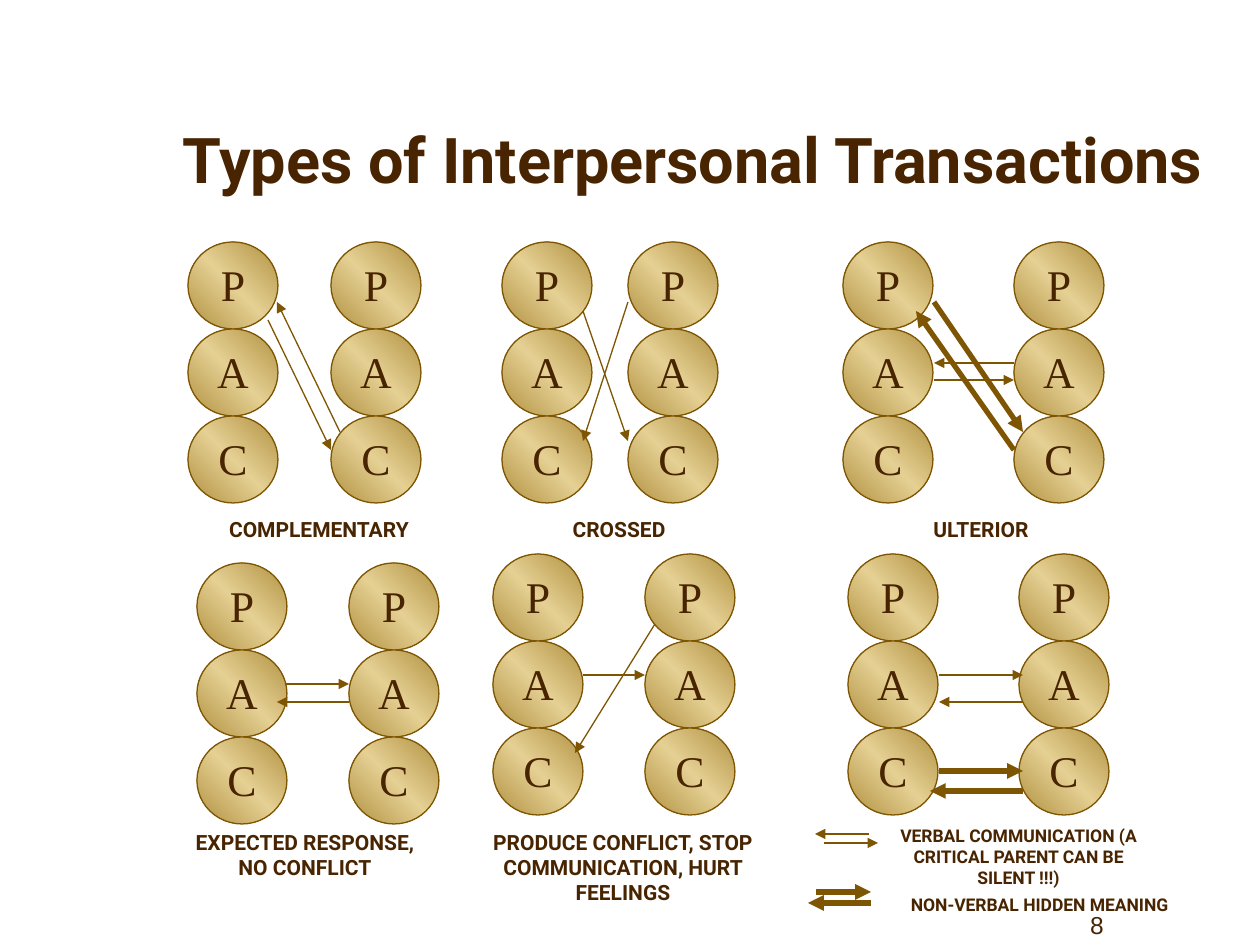
from copy import deepcopy
from dataclasses import dataclass

from lxml import etree
from pptx import Presentation
from pptx.dml.color import RGBColor
from pptx.enum.shapes import MSO_CONNECTOR, MSO_SHAPE
from pptx.enum.text import MSO_ANCHOR, PP_ALIGN
from pptx.oxml.ns import qn
from pptx.slide import Slide
from pptx.text.text import TextFrame
from pptx.util import Pt

CENTER = PP_ALIGN.CENTER
TOP, MIDDLE, BOTTOM = MSO_ANCHOR.TOP, MSO_ANCHOR.MIDDLE, MSO_ANCHOR.BOTTOM
OVAL, STRAIGHT = MSO_SHAPE.OVAL, MSO_CONNECTOR.STRAIGHT

EMU_PER_PX = 914400 / 126
PAGE_WIDTH, PAGE_HEIGHT = 1260, 945
CIRCLE_WIDTH, CIRCLE_HEIGHT = 90, 87
EGO_STATES = "PAC"


@dataclass(frozen=True)
class Theme:
    ink: RGBColor = RGBColor(0x48, 0x24, 0x00)
    outline: RGBColor = RGBColor(0x7E, 0x55, 0x02)
    gold_dark: RGBColor = RGBColor(0xB0, 0x90, 0x40)
    gold_light: RGBColor = RGBColor(0xE5, 0xD0, 0x93)
    sans: str = "Roboto"
    serif: str = "Times New Roman"
    number_font: str = "Arial"
    title_size: int = 36
    state_size: int = 25
    number_size: int = 14
    caption_size: int = 12
    legend_size: int = 10
    thin: float = 0.75
    thick: float = 3


THEME = Theme()


@dataclass(frozen=True)
class Pair:
    """Two people, each a column of Parent, Adult and Child circles."""
    left_person: int
    right_person: int
    top: int


@dataclass(frozen=True)
class Arrow:
    start: tuple[int, int]
    end: tuple[int, int]
    weight: float = THEME.thin


@dataclass(frozen=True)
class Label:
    text: str
    left: int
    top: int
    width: int
    height: int
    size: int = THEME.caption_size
    font: str = THEME.sans
    bold: bool = True
    anchor: MSO_ANCHOR = TOP
    bottom_inset: int = 6


PAIRS = (
    Pair(188, 331, 242), Pair(502, 628, 242), Pair(843, 1014, 242),
    Pair(197, 349, 563), Pair(493, 645, 554), Pair(848, 1019, 554),
)

ARROWS = (
    # Complementary
    Arrow((268, 320), (331, 450)), Arrow((340, 432), (277, 302)),
    Arrow((286, 684), (349, 684)), Arrow((349, 702), (277, 702)),
    # Crossed
    Arrow((628, 302), (583, 441)), Arrow((583, 311), (628, 441)),
    Arrow((583, 675), (645, 675)), Arrow((655, 624), (575, 753)),
    # Ulterior, verbal
    Arrow((934, 380), (1014, 380)), Arrow((1014, 363), (934, 363)),
    Arrow((939, 675), (1023, 675)), Arrow((1023, 702), (939, 702)),
    # Ulterior, hidden
    Arrow((1014, 450), (916, 311), THEME.thick),
    Arrow((934, 302), (1023, 432), THEME.thick),
    Arrow((939, 771), (1023, 771), THEME.thick),
    Arrow((1023, 791), (930, 791), THEME.thick),
    # Legend
    Arrow((869, 834), (815, 834)), Arrow((824, 843), (878, 843)),
    Arrow((816, 892), (871, 892), THEME.thick),
    Arrow((871, 903), (808, 903), THEME.thick),
)

LABELS = (
    Label("Types of Interpersonal Transactions", 126, 136, 1134, 63,
          THEME.title_size, anchor=BOTTOM, bottom_inset=3),
    Label("COMPLEMENTARY", 197, 510, 244, 35),
    Label("CROSSED", 520, 510, 198, 32),
    Label("ULTERIOR", 882, 510, 198, 32),
    Label("EXPECTED RESPONSE, NO CONFLICT", 179, 823, 252, 52),
    Label("PRODUCE CONFLICT, STOP COMMUNICATION, HURT FEELINGS",
          448, 823, 350, 52),
    Label("VERBAL COMMUNICATION (A CRITICAL PARENT CAN BE SILENT !!!)",
          875, 819, 287, 37, THEME.legend_size),
    Label("NON-VERBAL HIDDEN MEANING", 872, 888, 335, 37, THEME.legend_size),
    Label("8", 966, 882, 262, 63, THEME.number_size, THEME.number_font,
          bold=False, anchor=BOTTOM),
)


def px(length: int) -> int:
    return round(length * EMU_PER_PX)


def set_all(target: object, values: dict) -> None:
    for name, value in values.items():
        setattr(target, name, value)


def write(frame: TextFrame, text: str, frame_format: dict,
          font_format: dict, line_spacing: float = 1.0) -> None:
    set_all(frame, {"word_wrap": True, **frame_format})
    para = frame.paragraphs[0]
    set_all(para, {"alignment": CENTER, "line_spacing": line_spacing})
    span = para.add_run()
    span.text = text
    set_all(span.font, font_format)
    span.font.color.rgb = THEME.ink


def draw_label(page: Slide, label: Label) -> None:
    box = page.shapes.add_textbox(
        *map(px, (label.left, label.top, label.width, label.height)))
    write(box.text_frame, label.text,
          {"vertical_anchor": label.anchor,
           "margin_bottom": px(label.bottom_inset)},
          {"name": label.font, "size": Pt(label.size), "bold": label.bold})


def draw_circle(page: Slide, state: str, left: int, top: int) -> None:
    circle = page.shapes.add_shape(
        OVAL, *map(px, (left, top, CIRCLE_WIDTH, CIRCLE_HEIGHT)))
    circle.shadow.inherit = False
    circle.line.color.rgb = THEME.outline
    circle.line.width = Pt(THEME.thin)
    circle.fill.gradient()
    circle.fill.gradient_angle = 45
    stop_list = circle._element.spPr.find(qn("a:gradFill")).find(qn("a:gsLst"))
    stop_list.append(deepcopy(stop_list[0]))
    colors = (THEME.gold_dark, THEME.gold_light, THEME.gold_dark)
    for stop, position, color in zip(
            circle.fill.gradient_stops, (0, 0.5, 1), colors):
        stop.position = position
        stop.color.rgb = color
    write(circle.text_frame, state,
          {"vertical_anchor": MIDDLE, "margin_left": 0, "margin_right": 0,
           "margin_top": px(12), "margin_bottom": px(6)},
          {"name": THEME.serif, "size": Pt(THEME.state_size)},
          line_spacing=0.8)


def draw_pair(page: Slide, pair: Pair) -> None:
    for left in (pair.left_person, pair.right_person):
        for row, state in enumerate(EGO_STATES):
            draw_circle(page, state, left, pair.top + row * CIRCLE_HEIGHT)


def draw_arrow(page: Slide, arrow: Arrow) -> None:
    line = page.shapes.add_connector(
        STRAIGHT, *map(px, (*arrow.start, *arrow.end)))
    line.line.color.rgb = THEME.outline
    line.line.width = Pt(arrow.weight)
    etree.SubElement(line.line._get_or_add_ln(), qn("a:tailEnd"),
                     type="triangle")
    etree.SubElement(line._element.spPr, qn("a:effectLst"))


def main() -> None:
    deck = Presentation()
    set_all(deck, {"slide_width": px(PAGE_WIDTH),
                   "slide_height": px(PAGE_HEIGHT)})
    page = deck.slides.add_slide(deck.slide_layouts[6])
    for draw, items in ((draw_pair, PAIRS), (draw_arrow, ARROWS),
                        (draw_label, LABELS)):
        for item in items:
            draw(page, item)
    deck.save("out.pptx")


if __name__ == "__main__":
    main()
